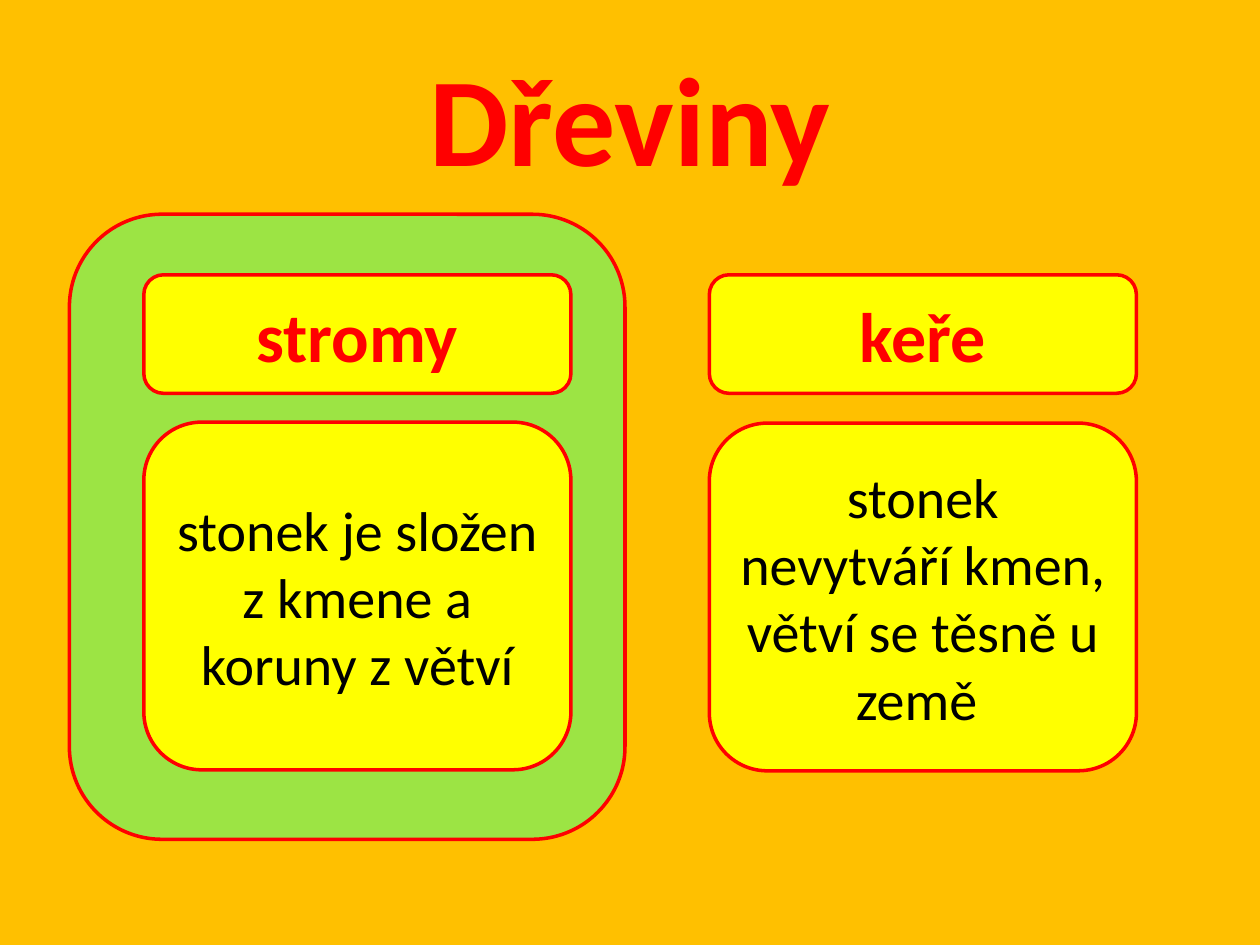
from dataclasses import dataclass

from pptx import Presentation
from pptx.dml.color import RGBColor
from pptx.enum.shapes import MSO_SHAPE
from pptx.enum.text import MSO_ANCHOR, MSO_AUTO_SIZE, PP_ALIGN
from pptx.util import Cm, Pt

ROUND = MSO_SHAPE.ROUNDED_RECTANGLE
CENTER = PP_ALIGN.CENTER
MIDDLE = MSO_ANCHOR.MIDDLE
FIXED = MSO_AUTO_SIZE.NONE
TITLE_ONLY = 5


@dataclass(frozen=True)
class Theme:
    font: str = "Calibri"
    back: str = "FFC000"
    red: str = "FF0000"
    green: str = "9CE444"
    yellow: str = "FFFF00"
    black: str = "000000"
    title: int = 72
    head: int = 40
    body: int = 32
    line: int = 2


THEME = Theme()


def color(code):
    return RGBColor.from_string(code)


def write(shape, text, size, ink, bold=False):
    frame = shape.text_frame
    frame.text = text
    frame.word_wrap = True
    frame.auto_size = FIXED
    frame.vertical_anchor = MIDDLE
    para = frame.paragraphs[0]
    para.alignment = CENTER
    font = para.font
    font.name, font.size, font.bold = THEME.font, Pt(size), bold
    font.color.rgb = color(ink)


def add_title(slide, text):
    title = slide.shapes.title
    title.left, title.top = Cm(1.27), Cm(0.76)
    title.width, title.height = Cm(22.86), Cm(3.18)
    write(title, text, THEME.title, THEME.red, bold=True)


def add_box(slide, left, top, width, height, fill):
    box = slide.shapes.add_shape(ROUND, Cm(left), Cm(top), Cm(width), Cm(height))
    box.shadow.inherit = False
    box.fill.solid()
    box.fill.fore_color.rgb = color(fill)
    box.line.color.rgb = color(THEME.red)
    box.line.width = Pt(THEME.line)
    return box


def add_group(slide, left, top, head, body):
    """Heading box with its description box below."""
    width = 8.61
    box = add_box(slide, left, 5.54, width, 2.39, THEME.yellow)
    write(box, head, THEME.head, THEME.red, bold=True)
    box = add_box(slide, left, top, width, 7.01, THEME.yellow)
    write(box, body, THEME.body, THEME.black)


def main():
    deck = Presentation()
    deck.slide_width, deck.slide_height = Cm(25.4), Cm(19.05)
    slide = deck.slides.add_slide(deck.slide_layouts[TITLE_ONLY])
    slide.background.fill.solid()
    slide.background.fill.fore_color.rgb = color(THEME.back)

    add_title(slide, "Dřeviny")

    # Green panel that marks the trees
    add_box(slide, 1.4, 4.32, 11.2, 12.6, THEME.green)

    # Trees and shrubs
    add_group(slide, 2.9, 8.51, "stromy",
              "stonek je složen z kmene a koruny z větví")
    add_group(slide, 14.3, 8.53, "keře",
              "stonek nevytváří kmen, větví se těsně u země ")

    deck.save("out.pptx")


if __name__ == "__main__":
    main()
